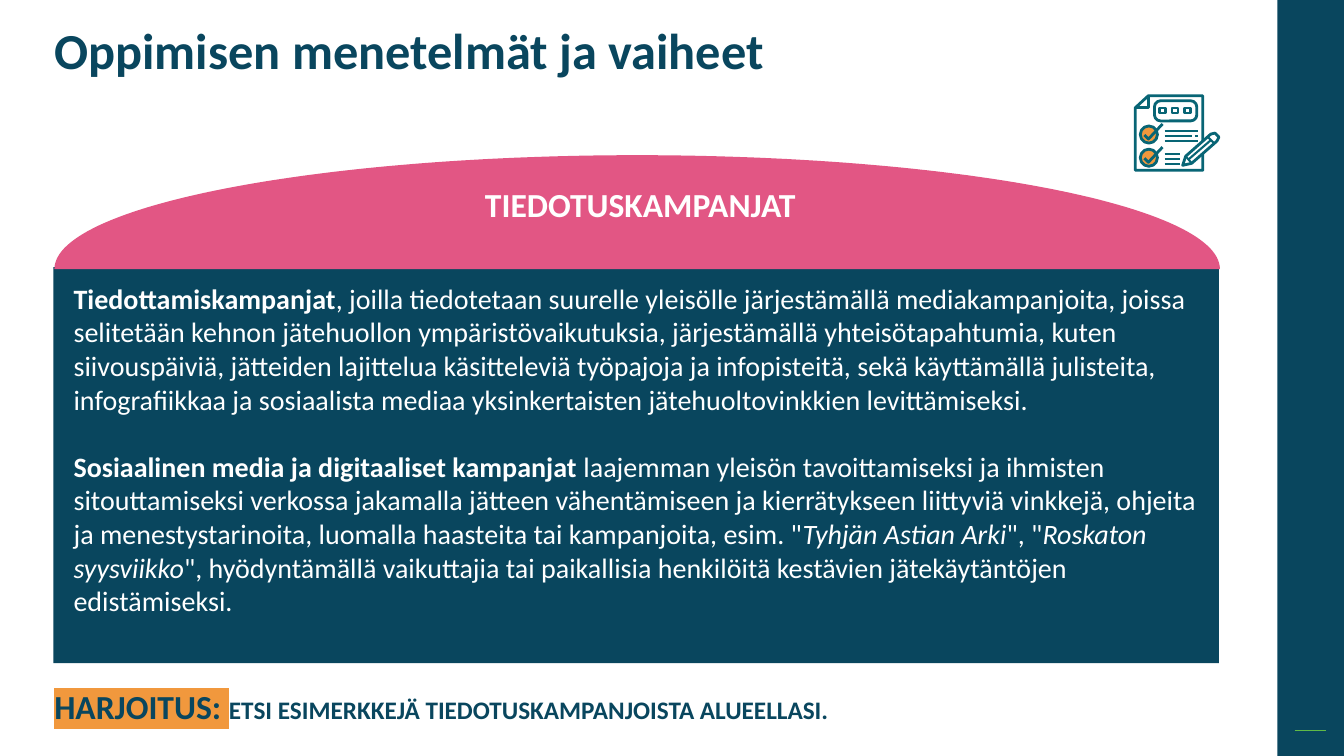
from math import cos, pi, sin

from pptx import Presentation
from pptx.dml.color import RGBColor
from pptx.enum.shapes import MSO_CONNECTOR, MSO_SHAPE
from pptx.enum.text import MSO_ANCHOR, PP_ALIGN
from pptx.oxml.ns import qn
from pptx.util import Inches, Pt
from lxml import etree

NAVY = RGBColor(0x09, 0x46, 0x5E)
PINK = RGBColor(0xE2, 0x56, 0x84)
ORANGE = RGBColor(0xF1, 0x98, 0x3D)
TEAL = RGBColor(0x08, 0x65, 0x75)
GREEN = RGBColor(0x60, 0xBA, 0x47)
WHITE = RGBColor(0xFF, 0xFF, 0xFF)
FONT = "Calibri"

BODY = [
    [("Tiedottamiskampanjat", "b"),
     (", joilla tiedotetaan suurelle yleisölle järjestämällä mediakampanjoita, joissa "
      "selitetään kehnon jätehuollon ympäristövaikutuksia, järjestämällä yhteisötapahtumia, "
      "kuten siivouspäiviä, jätteiden lajittelua käsitteleviä työpajoja ja infopisteitä, sekä "
      "käyttämällä julisteita, infografiikkaa ja sosiaalista mediaa yksinkertaisten "
      "jätehuoltovinkkien levittämiseksi.", "")],
    [("Sosiaalinen media ja digitaaliset kampanjat ", "b"),
     ("laajemman yleisön tavoittamiseksi ja ihmisten sitouttamiseksi verkossa jakamalla "
      "jätteen vähentämiseen ja kierrätykseen liittyviä vinkkejä, ohjeita ja "
      "menestystarinoita, luomalla haasteita tai kampanjoita, esim. \"", ""),
     ("Tyhjän Astian Arki", "i"),
     ("\", \"", ""),
     ("Roskaton syysviikko", "i"),
     ("\", hyödyntämällä vaikuttajia tai paikallisia henkilöitä kestävien jätekäytäntöjen "
      "edistämiseksi.", "")],
]


def paint(sp, fill=None, line=None, width=2):
    sp.shadow.inherit = False
    if fill is None:
        sp.fill.background()
    else:
        sp.fill.solid()
        sp.fill.fore_color.rgb = fill
    if line is None:
        sp.line.fill.background()
    else:
        sp.line.color.rgb = line
        sp.line.width = Pt(width)
    return sp


def add_box(shapes, kind, x, y, w, h, **colours):
    sp = shapes.add_shape(kind, Inches(x), Inches(y), Inches(w), Inches(h))
    return paint(sp, **colours)


def add_outline(shapes, points, closed=True, **colours):
    pts = [(Inches(x), Inches(y)) for x, y in points]
    builder = shapes.build_freeform(*pts[0])
    builder.add_line_segments(pts[1:], close=closed)
    return paint(builder.convert_to_shape(), **colours)


def add_line(shapes, x1, y1, x2, y2, colour, width):
    line = shapes.add_connector(MSO_CONNECTOR.STRAIGHT, Inches(x1), Inches(y1),
                                Inches(x2), Inches(y2))
    line.line.color.rgb = colour
    line.line.width = Pt(width)
    etree.SubElement(line._element.spPr, qn("a:effectLst"))


def add_run(p, text, size, colour, style="b"):
    r = p.add_run()
    r.text = text
    r.font.size = Pt(size)
    r.font.bold = "b" in style
    r.font.italic = "i" in style
    r.font.color.rgb = colour
    r.font.name = FONT
    return r


def highlight(r, colour):
    mark = etree.Element(qn("a:highlight"))
    etree.SubElement(mark, qn("a:srgbClr"), val=str(colour))
    r._r.get_or_add_rPr().find(qn("a:solidFill")).addnext(mark)


def add_text_box(shapes, x, y, w, h):
    tf = shapes.add_textbox(Inches(x), Inches(y), Inches(w), Inches(h)).text_frame
    tf.word_wrap = True
    return tf.paragraphs[0]


def add_side_band(shapes, x, y, w, h):
    add_box(shapes, MSO_SHAPE.RECTANGLE, x, y, w, h, fill=NAVY)
    add_line(shapes, x + 0.17, y + 7.25, x + 0.48, y + 7.25, GREEN, 1)


def add_title(title, x, y, w, h):
    title.left, title.top = Inches(x), Inches(y)
    title.width, title.height = Inches(w), Inches(h)
    tf = title.text_frame
    tf.vertical_anchor = MSO_ANCHOR.MIDDLE
    p = tf.paragraphs[0]
    p.alignment = PP_ALIGN.LEFT
    p.line_spacing = 0.9
    add_run(p, "Oppimisen menetelmät ja vaiheet", 36, NAVY)


def add_dome(shapes, x, y, w, h):
    """Upper half of an ellipse with the heading centred on it."""
    steps = 120
    angles = [pi * i / steps for i in range(steps + 1)]
    add_outline(shapes, [(x + w / 2 * (1 - cos(a)), y + h * (1 - sin(a))) for a in angles],
                fill=PINK)
    p = add_text_box(shapes, x + 0.92, y + 0.24, w - 1.78, 0.5)
    p.alignment = PP_ALIGN.CENTER
    add_run(p, "TIEDOTUSKAMPANJAT", 24, WHITE)


def add_body(shapes, x, y, w, h):
    panel = add_box(shapes, MSO_SHAPE.RECTANGLE, x, y, w, h, fill=NAVY)
    tf = panel.text_frame
    tf.word_wrap = True
    tf.vertical_anchor = MSO_ANCHOR.TOP
    tf.margin_left, tf.margin_top = Inches(0.2), Inches(0.14)
    for i, runs in enumerate(BODY):
        p = tf.add_paragraph() if i else tf.paragraphs[0]
        p.alignment = PP_ALIGN.LEFT
        if i:
            p.space_before = Pt(24)
        for text, style in runs:
            add_run(p, text, 20, WHITE, style)


def add_checklist_icon(shapes, x, y):
    """Checklist sheet with a pencil, 0.86 by 0.78 inches."""
    def at(*points):
        return [(x + dx, y + dy) for dx, dy in points]

    add_outline(shapes, at((0.15, 0.02), (0.69, 0.02), (0.69, 0.76), (0.02, 0.76),
                           (0.02, 0.14)), line=TEAL)
    add_outline(shapes, at((0.02, 0.14), (0.15, 0.14), (0.15, 0.02)), closed=False, line=TEAL)
    label = add_box(shapes, MSO_SHAPE.ROUNDED_RECTANGLE, x + 0.21, y + 0.07, 0.42, 0.2,
                    line=TEAL)
    label.adjustments[0] = 0.3
    for i in range(3):
        add_box(shapes, MSO_SHAPE.RECTANGLE, x + 0.26 + 0.125 * i, y + 0.14, 0.06, 0.05,
                line=TEAL, width=1.75)
    for top, ends in ((0.32, (0.64, 0.58, 0.64)), (0.55, (0.46, 0.46, 0.46))):
        add_box(shapes, MSO_SHAPE.OVAL, x + 0.07, y + top, 0.17, 0.17, fill=ORANGE, line=TEAL)
        add_outline(shapes, at((0.11, top + 0.09), (0.15, top + 0.13), (0.29, top - 0.02)),
                    closed=False, line=TEAL)
        for i, end in enumerate(ends):
            dy = y + top + 0.05 + 0.05 * i
            add_line(shapes, x + 0.31, dy, x + end, dy, TEAL, 1.5)
    add_line(shapes, x + 0.61, y + 0.42, x + 0.64, y + 0.42, TEAL, 1.5)
    add_outline(shapes, at((0.49, 0.71), (0.52, 0.62), (0.77, 0.4), (0.81, 0.39), (0.85, 0.43),
                           (0.83, 0.47), (0.58, 0.69)), fill=WHITE, line=TEAL)
    for start, end in (((0.52, 0.62), (0.58, 0.69)), ((0.55, 0.65), (0.77, 0.46)),
                       ((0.74, 0.43), (0.8, 0.49))):
        add_line(shapes, *at(start)[0], *at(end)[0], TEAL, 1.5)


def add_exercise(shapes, x, y, w, h):
    p = add_text_box(shapes, x, y, w, h)
    highlight(add_run(p, "HARJOITUS: ", 24, NAVY), ORANGE)
    add_run(p, "ETSI ESIMERKKEJÄ TIEDOTUSKAMPANJOISTA ALUEELLASI.", 18, NAVY)


def main():
    prs = Presentation()
    prs.slide_width, prs.slide_height = Inches(13.33), Inches(7.5)
    shapes = prs.slides.add_slide(prs.slide_layouts[5]).shapes
    add_side_band(shapes, 12.67, 0, 0.66, 7.5)
    add_title(shapes.title, 0.44, 0.24, 8.74, 0.58)
    add_body(shapes, 0.53, 2.65, 11.56, 3.93)
    add_dome(shapes, 0.54, 1.54, 11.56, 1.13)
    add_checklist_icon(shapes, 11.24, 0.93)
    add_exercise(shapes, 0.44, 6.76, 11.64, 0.5)
    prs.save("out.pptx")


if __name__ == "__main__":
    main()
